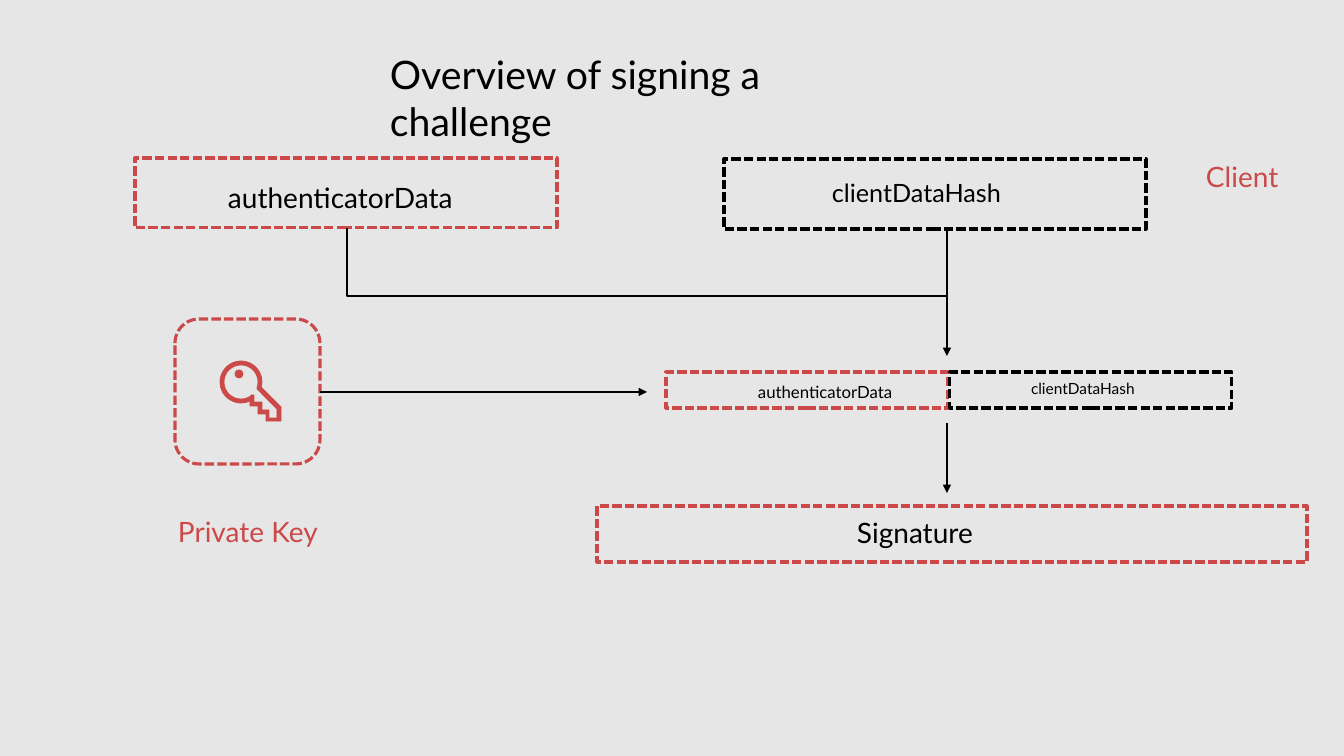
"""Builds a slide that shows how a challenge is signed with a private key."""
import math

import pptx
import pptx.dml.color
import pptx.enum.dml
import pptx.enum.shapes
import pptx.enum.text
import pptx.oxml.ns
import pptx.util
from lxml import etree

PX = 914400 / 100.8
RED = pptx.dml.color.RGBColor(0xCC, 0x49, 0x49)
BLACK = pptx.dml.color.RGBColor(0, 0, 0)
GREY = pptx.dml.color.RGBColor(0xE7, 0xE6, 0xE6)
SHAPE = pptx.enum.shapes.MSO_SHAPE
CONNECTOR = pptx.enum.shapes.MSO_CONNECTOR
qn = pptx.oxml.ns.qn


def px(*lengths):
    return [round(length * PX) for length in lengths]


def write(text, box, size=20, color=BLACK, shape=None, margin_right=10):
    shape = shape or slide.shapes.add_textbox(*px(*box))
    shape.left, shape.top, shape.width, shape.height = px(*box)
    frame = shape.text_frame
    frame.word_wrap = True
    frame.auto_size = pptx.enum.text.MSO_AUTO_SIZE.NONE
    frame.vertical_anchor = pptx.enum.text.MSO_ANCHOR.TOP
    frame.margin_left, frame.margin_top, frame.margin_right, frame.margin_bottom = px(10, 5, margin_right, 5)
    paragraph = frame.paragraphs[0]
    paragraph.alignment = pptx.enum.text.PP_ALIGN.LEFT
    run = paragraph.add_run()
    run.text = text
    run.font.name = "Lato"
    run.font.size = pptx.util.Pt(size)
    run.font.color.rgb = color


presentation = pptx.Presentation()
presentation.slide_width, presentation.slide_height = px(1344, 756)
slide = presentation.slides.add_slide(presentation.slide_layouts[5])
slide.background.fill.solid()
slide.background.fill.fore_color.rgb = GREY

write("Overview of signing a challenge", (380, 45, 561, 57), size=28,
      shape=slide.shapes.title, margin_right=100)

dashed_boxes = [
    (SHAPE.RECTANGLE, (135, 158, 422, 70), RED),
    (SHAPE.RECTANGLE, (724, 159, 422, 70), BLACK),
    (SHAPE.ROUNDED_RECTANGLE, (175, 319, 145, 145), RED),
    (SHAPE.RECTANGLE, (666, 372, 282, 36), RED),
    (SHAPE.RECTANGLE, (950, 372, 282, 36), BLACK),
    (SHAPE.RECTANGLE, (597, 506, 710, 56), RED),
]
for kind, box, color in dashed_boxes:
    shape = slide.shapes.add_shape(kind, *px(*box))
    shape.shadow.inherit = False
    shape.fill.background()
    shape.line.color.rgb = color
    shape.line.width = pptx.util.Pt(2.25)
    shape.line.dash_style = pptx.enum.dml.MSO_LINE.SQUARE_DOT

key_contours = [
    (21, 64, 375, [(250, 400), (250, 406), (258, 406), (258, 414), (266, 414),
                   (266, 421), (281, 421), (281, 407), (261, 387)]),
    (17, 53, 379, [(251, 395), (254, 395), (254, 402), (262, 402), (262, 410),
                   (269, 410), (269, 418), (277, 418), (277, 409), (257, 389)]),
]
builder = None
for radius, first, last, teeth in key_contours:
    angles = [math.radians(first + (last - first) * step / 40) for step in range(41)]
    bow = [(241 + radius * math.cos(angle), 382 + radius * math.sin(angle)) for angle in angles]
    points = [px(*point) for point in bow + teeth[::-1]]
    if builder is None:
        builder = slide.shapes.build_freeform(*points[0])
    else:
        builder.move_to(*points[0])
    builder.add_line_segments(points[1:], close=True)
key = builder.convert_to_shape()
key_hole = slide.shapes.add_shape(SHAPE.OVAL, *px(235, 370, 8, 8))
for shape in (key, key_hole):
    shape.shadow.inherit = False
    shape.fill.solid()
    shape.fill.fore_color.rgb = RED
    shape.line.color.rgb = RED
    shape.line.width = pptx.util.Pt(0.5)

labels = [
    ("authenticatorData", (218, 175, 251, 44), 20, BLACK),
    ("clientDataHash", (822, 172, 194, 40), 18, BLACK),
    ("authenticatorData", (748, 377, 167, 30), 12, BLACK),
    ("clientDataHash", (1021, 374, 129, 29), 11, BLACK),
    ("Signature", (847, 510, 140, 44), 20, BLACK),
    ("Private Key", (168, 509, 163, 44), 20, RED),
    ("Client", (1196, 154, 96, 44), 20, RED),
]
for text, box, size, color in labels:
    write(text, box, size=size, color=color)

links = [
    (CONNECTOR.STRAIGHT, (947, 229, 947, 356)),
    (CONNECTOR.STRAIGHT, (947, 423, 947, 493)),
    (CONNECTOR.STRAIGHT, (320, 392, 647, 392)),
    (CONNECTOR.ELBOW, (681, -38, 613, 562)),
]
for kind, ends in links:
    connector = slide.shapes.add_connector(kind, *px(*ends))
    connector.line.color.rgb = BLACK
    connector.line.width = pptx.util.Pt(1.5)
    properties = connector._element.spPr
    if kind == CONNECTOR.ELBOW:
        properties.find(qn("a:xfrm")).set("rot", "16200000")
        properties.find(qn("a:prstGeom")).set("prst", "bentConnector2")
    else:
        etree.SubElement(properties.find(qn("a:ln")), qn("a:tailEnd"), type="triangle")
    etree.SubElement(properties, qn("a:effectLst"))

presentation.save("out.pptx")
